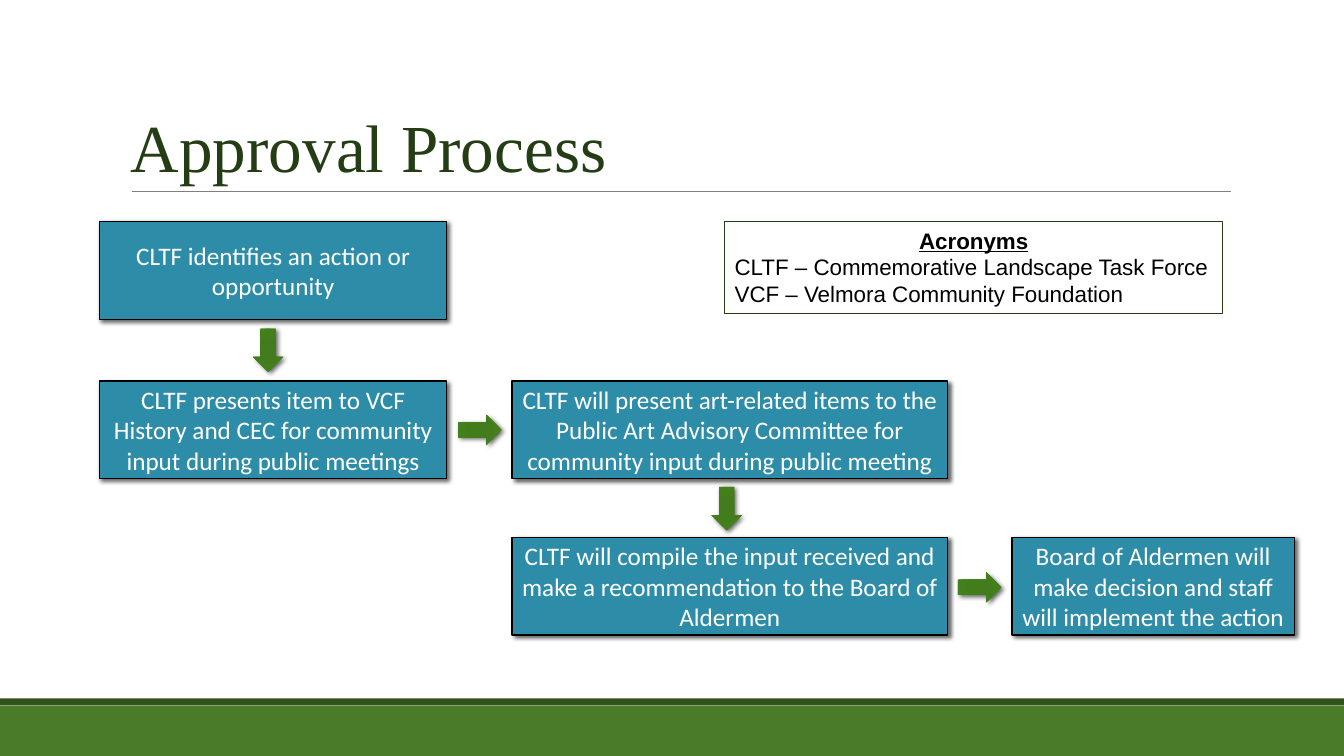
"""Build the Approval Process flow slide."""
from dataclasses import dataclass

from lxml import etree
from pptx import Presentation
from pptx.dml.color import RGBColor
from pptx.enum.shapes import MSO_CONNECTOR, MSO_SHAPE
from pptx.enum.text import MSO_ANCHOR, PP_ALIGN
from pptx.oxml import parse_xml
from pptx.oxml.ns import nsdecls, qn
from pptx.util import Pt

RECTANGLE = MSO_SHAPE.RECTANGLE
PROCESS = MSO_SHAPE.FLOWCHART_PROCESS
DOWN_ARROW = MSO_SHAPE.DOWN_ARROW
STRAIGHT = MSO_CONNECTOR.STRAIGHT
TOP, MIDDLE, BOTTOM = MSO_ANCHOR.TOP, MSO_ANCHOR.MIDDLE, MSO_ANCHOR.BOTTOM
LEFT, CENTER = PP_ALIGN.LEFT, PP_ALIGN.CENTER

COLORS = {
    "footer": "4A7B29",
    "footer_edge": "31521B",
    "rule": "7F7F7F",
    "title": "243D14",
    "step": "2D8DA8",
    "black": "000000",
    "white": "FFFFFF",
}
ARROW_STOPS = ((0, "417D1A"), (34, "437C1C"), (70, "43801B"), (100, "497F24"))
STEP_HEIGHT = 69.8
ARROW_WIDTH, ARROW_LENGTH = 21.6, 31
ROW_TOPS = (158.4, 272.2, 383.8)
COLUMNS = ((71.3, 247.7), (365.8, 311), (722.9, 201.6))


@dataclass(frozen=True)
class Step:
    column: int
    row: int
    wording: str


@dataclass(frozen=True)
class Arrow:
    center_x: float
    center_y: float
    rotation: int


STEPS = (
    Step(0, 0, "CLTF identifies an action or opportunity"),
    Step(0, 1, "CLTF presents item to VCF History and CEC for community input "
               "during public meetings"),
    Step(1, 1, "CLTF will present art-related items to the Public Art Advisory "
               "Committee for community input during public meeting"),
    Step(1, 2, "CLTF will compile the input received and make a recommendation "
               "to the Board of Aldermen"),
    Step(2, 2, "Board of Aldermen will make decision and staff will implement "
               "the action"),
)
ARROWS = (
    Arrow(191.5, 250.2, 0),
    Arrow(342.7, 307.1, 270),
    Arrow(519.1, 363.3, 0),
    Arrow(699.8, 419.4, 270),
)


def rgb(name: str) -> RGBColor:
    return RGBColor.from_string(COLORS[name])


def add_box(slide, kind, left: float, top: float, width: float, height: float,
            fill: str = "", line: str = "", line_width: float = 1):
    box = slide.shapes.add_shape(kind, Pt(left), Pt(top), Pt(width), Pt(height))
    box.shadow.inherit = False
    if fill:
        box.fill.solid()
        box.fill.fore_color.rgb = rgb(fill)
    else:
        box.fill.background()
    if line:
        box.line.color.rgb = rgb(line)
        box.line.width = Pt(line_width)
    else:
        box.line.fill.background()
    return box


def write(frame, text: str, *, size: float, font: str, color: str,
          align=LEFT, anchor=TOP, bold: bool = False, underline: bool = False,
          spacing: float = 1, append: bool = False) -> None:
    frame.word_wrap = True
    frame.vertical_anchor = anchor
    paragraph = frame.add_paragraph() if append else frame.paragraphs[0]
    paragraph.alignment = align
    paragraph.line_spacing = spacing
    run = paragraph.add_run()
    run.text = text
    run.font.size = Pt(size)
    run.font.name = font
    run.font.color.rgb = rgb(color)
    run.font.bold = bold
    run.font.underline = underline


def cast_shadow(box, blur: float) -> None:
    effects = box.element.spPr.find(qn("a:effectLst"))
    effects.append(parse_xml(
        f'<a:outerShdw {nsdecls("a")} blurRad="{Pt(blur)}" dist="{Pt(2)}" '
        f'dir="2700000" algn="tl" rotWithShape="0"><a:srgbClr val="{COLORS["black"]}">'
        '<a:alpha val="60000"/></a:srgbClr></a:outerShdw>'))


def add_step(slide, step: Step) -> None:
    left, width = COLUMNS[step.column]
    box = add_box(slide, PROCESS, left, ROW_TOPS[step.row], width, STEP_HEIGHT,
                  fill="step", line="black")
    cast_shadow(box, 3)
    write(box.text_frame, step.wording, size=18, font="Calibri", color="white",
          align=CENTER, anchor=MIDDLE)


def add_arrow(slide, arrow: Arrow) -> None:
    block = add_box(slide, DOWN_ARROW, arrow.center_x - ARROW_WIDTH / 2,
                    arrow.center_y - ARROW_LENGTH / 2, ARROW_WIDTH, ARROW_LENGTH)
    block.rotation = arrow.rotation
    stops = "".join(f'<a:gs pos="{position * 1000}"><a:srgbClr val="{color}"/></a:gs>'
                    for position, color in ARROW_STOPS)
    properties = block.element.spPr
    properties.replace(properties.find(qn("a:noFill")), parse_xml(
        f'<a:gradFill {nsdecls("a")} rotWithShape="1"><a:gsLst>{stops}</a:gsLst>'
        '<a:path path="circle"><a:fillToRect l="50000" t="50000" r="50000" b="50000"/>'
        '</a:path></a:gradFill>'))
    cast_shadow(block, 3.5)


def add_heading(slide) -> None:
    rule = slide.shapes.add_connector(STRAIGHT, Pt(94.3), Pt(136.8), Pt(879.1), Pt(136.8))
    rule.line.color.rgb = rgb("rule")
    rule.line.width = Pt(0.75)
    etree.SubElement(rule.element.spPr, qn("a:effectLst"))
    title = slide.shapes.add_textbox(Pt(86.4), Pt(22.3), Pt(792), Pt(114.5))
    write(title.text_frame, "Approval Process", size=48, font="Times New Roman",
          color="title", anchor=BOTTOM, spacing=0.85)


def add_acronyms(slide) -> None:
    legend = add_box(slide, RECTANGLE, 517.7, ROW_TOPS[0], 355.7, 65.5,
                     line="title", line_width=0.75)
    style = {"size": 16, "font": "Arial", "color": "black"}
    write(legend.text_frame, "Acronyms", align=CENTER, bold=True, underline=True, **style)
    for entry in ("CLTF – Commemorative Landscape Task Force",
                  "VCF – Velmora Community Foundation"):
        write(legend.text_frame, entry, append=True, **style)


def main() -> None:
    deck = Presentation()
    deck.slide_width, deck.slide_height = Pt(960), Pt(540)
    slide = deck.slides.add_slide(deck.slide_layouts[6])
    add_box(slide, RECTANGLE, 0, 504, 960, 36, fill="footer")
    add_box(slide, RECTANGLE, 0, 498.9, 960, 5, fill="footer_edge")
    add_heading(slide)
    for step in STEPS:
        add_step(slide, step)
    for arrow in ARROWS:
        add_arrow(slide, arrow)
    add_acronyms(slide)
    deck.save("out.pptx")


if __name__ == "__main__":
    main()
